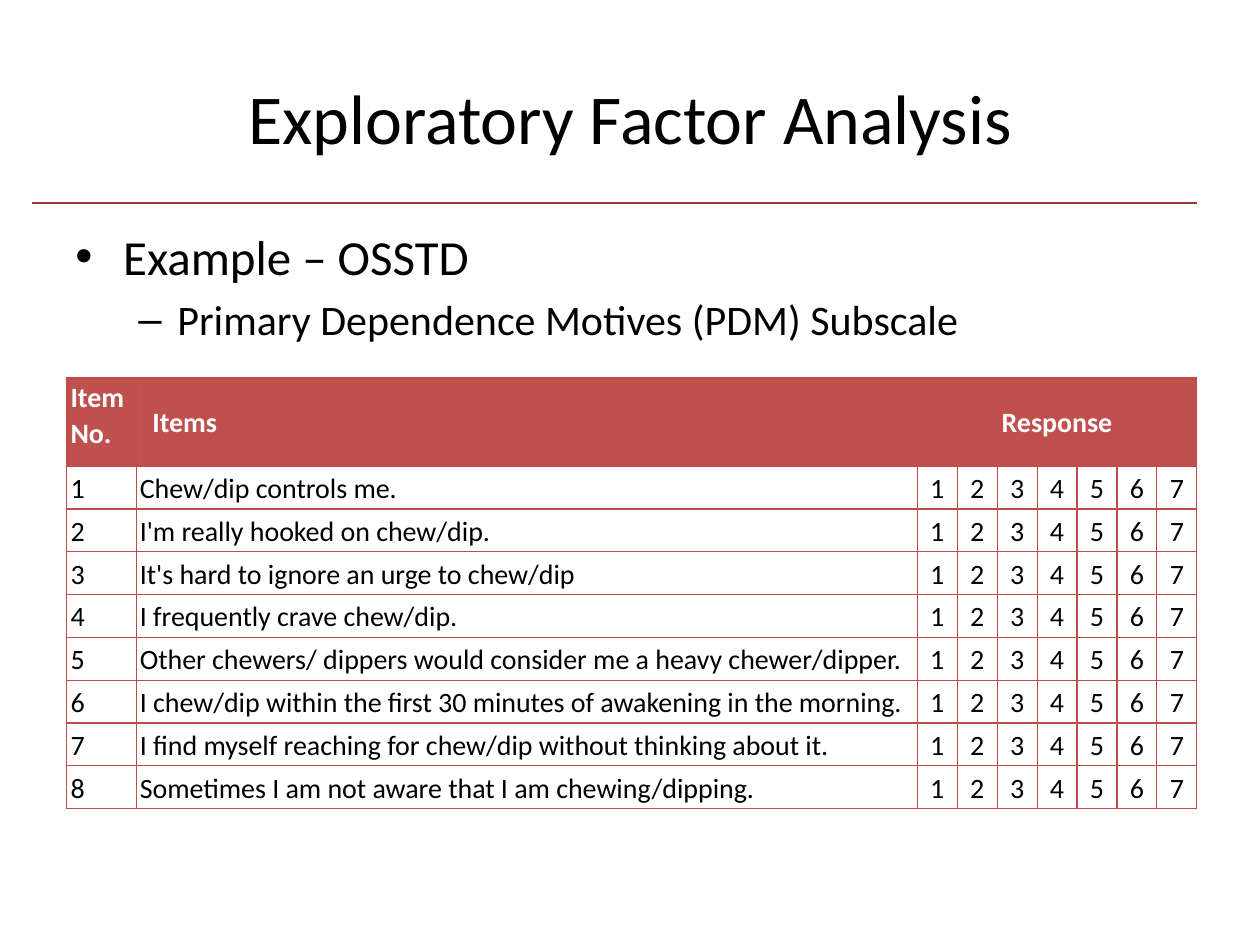
"""Build the Exploratory Factor Analysis slide with its questionnaire table."""
import dataclasses

import lxml.etree
import pptx
import pptx.dml.color
import pptx.enum.shapes
import pptx.enum.text
import pptx.oxml.ns
import pptx.util

Inches = pptx.util.Inches
Pt = pptx.util.Pt
Color = pptx.dml.color.RGBColor.from_string
Align = pptx.enum.text.PP_ALIGN
Anchor = pptx.enum.text.MSO_ANCHOR
qn = pptx.oxml.ns.qn


@dataclasses.dataclass(frozen=True)
class Theme:
    font: str = "Calibri"
    text: str = "000000"
    paper: str = "FFFFFF"
    rule: str = "953735"
    header: str = "C0504D"
    border: str = "BF4C48"
    title_size: int = 40
    bullet_sizes: tuple = (28, 24)
    table_size: int = 16
    rule_width: float = 1.5
    border_width: float = 0.75


def set_format(target, values):
    for name, value in values.items():
        setattr(target, name, value)


class SlideBuilder:
    def __init__(self, slide, theme):
        self.slide = slide
        self.theme = theme

    def style_font(self, paragraph, size, color, bold=False):
        set_format(paragraph.font, {"name": self.theme.font, "size": Pt(size), "bold": bold})
        paragraph.font.color.rgb = Color(color)

    def add_rule(self, left, right, top):
        line = self.slide.shapes.add_connector(
            pptx.enum.shapes.MSO_CONNECTOR.STRAIGHT,
            Inches(left), Inches(top), Inches(right), Inches(top))
        line.line.color.rgb = Color(self.theme.rule)
        line.line.width = Pt(self.theme.rule_width)
        lxml.etree.SubElement(line._element.spPr, qn("a:effectLst"))

    def add_text_frame(self, left, top, width, height, anchor):
        box = self.slide.shapes.add_textbox(
            Inches(left), Inches(top), Inches(width), Inches(height))
        set_format(box.text_frame, {"word_wrap": True, "vertical_anchor": anchor})
        return box.text_frame

    def add_title(self, text, *place):
        paragraph = self.add_text_frame(*place, Anchor.MIDDLE).paragraphs[0]
        set_format(paragraph, {"text": text, "alignment": Align.CENTER})
        self.style_font(paragraph, self.theme.title_size, self.theme.text)

    def add_bullets(self, bullets, *place):
        frame = self.add_text_frame(*place, Anchor.TOP)
        for index, (text, level, symbol, margin, indent) in enumerate(bullets):
            paragraph = frame.add_paragraph() if index else frame.paragraphs[0]
            size = self.theme.bullet_sizes[level]
            set_format(paragraph, {"text": text, "level": level})
            if index:
                paragraph.space_before = Pt(0.2 * size)
            properties = paragraph._p.get_or_add_pPr()
            properties.set("marL", str(Inches(margin)))
            properties.set("indent", str(Inches(indent)))
            lxml.etree.SubElement(properties, qn("a:buFont")).set("typeface", "Arial")
            lxml.etree.SubElement(properties, qn("a:buChar")).set("char", symbol)
            self.style_font(paragraph, size, self.theme.text)

    def add_borders(self, cell):
        properties = cell._tc.get_or_add_tcPr()
        for index, side in enumerate(("lnL", "lnR", "lnT", "lnB")):
            line = lxml.etree.Element(qn(f"a:{side}"), w=str(Pt(self.theme.border_width)))
            fill = lxml.etree.SubElement(line, qn("a:solidFill"))
            lxml.etree.SubElement(fill, qn("a:srgbClr")).set("val", self.theme.border)
            properties.insert(index, line)

    def fill_cell(self, cell, text, header, alignment, anchor, indent):
        set_format(cell, {
            "text": text, "vertical_anchor": anchor,
            "margin_left": Inches(0.03 + indent), "margin_right": Inches(0.03),
            "margin_top": 0, "margin_bottom": 0})
        cell.fill.solid()
        cell.fill.fore_color.rgb = Color(self.theme.header if header else self.theme.paper)
        self.add_borders(cell)
        paragraph = cell.text_frame.paragraphs[0]
        set_format(paragraph, {"alignment": alignment, "line_spacing": 1.07})
        color = self.theme.paper if header else self.theme.text
        self.style_font(paragraph, self.theme.table_size, color, header)

    def add_questionnaire(self, headings, items, choices, left, top, widths, heights):
        rows = [headings + [""] * (len(choices) - 1)]
        rows += [[str(number), item, *choices] for number, item in enumerate(items, 1)]
        table = self.slide.shapes.add_table(
            len(rows), len(widths), Inches(left), Inches(top),
            Inches(sum(widths)), Inches(sum(heights))).table
        table.horz_banding = False
        for column, width in zip(table.columns, widths):
            column.width = Inches(width)
        for row, height in zip(table.rows, heights):
            row.height = Inches(height)
        for row_index, row in enumerate(rows):
            header = row_index == 0
            for column_index, text in enumerate(row):
                alignment = Align.CENTER if column_index > 1 else Align.LEFT
                anchor = Anchor.TOP if header and column_index == 0 else Anchor.MIDDLE
                indent = 0.1 if header and column_index == 1 else 0
                self.fill_cell(table.cell(row_index, column_index), text, header,
                               alignment, anchor, indent)
        table.cell(0, 2).merge(table.cell(0, len(widths) - 1))


def main():
    presentation = pptx.Presentation()
    set_format(presentation, {"slide_width": Inches(10), "slide_height": Inches(7.5)})
    slide = presentation.slides.add_slide(presentation.slide_layouts[6])
    builder = SlideBuilder(slide, Theme())
    builder.add_rule(0.25, 9.5, 1.61)
    builder.add_title("Exploratory Factor Analysis", 0.5, 0.3, 9, 1.25)
    builder.add_bullets([
        ("Example – OSSTD", 0, "•", 0.38, -0.38),
        ("Primary Dependence Motives (PDM) Subscale", 1, "–", 0.81, -0.31),
    ], 0.5, 1.75, 9, 1.2)
    items = [
        "Chew/dip controls me.",
        "I'm really hooked on chew/dip.",
        "It's hard to ignore an urge to chew/dip",
        "I frequently crave chew/dip.",
        "Other chewers/ dippers would consider me a heavy chewer/dipper.",
        "I chew/dip within the first 30 minutes of awakening in the morning.",
        "I find myself reaching for chew/dip without thinking about it.",
        "Sometimes I am not aware that I am chewing/dipping.",
    ]
    choices = [str(choice) for choice in range(1, 8)]
    label_widths = [0.55, 6.2]
    choice_width = (8.97 - sum(label_widths)) / len(choices)
    builder.add_questionnaire(
        ["Item No.", "Items", "Response"], items, choices, 0.53, 3,
        label_widths + [choice_width] * len(choices), [0.7] + [0.34] * len(items))
    presentation.save("out.pptx")


if __name__ == "__main__":
    main()
